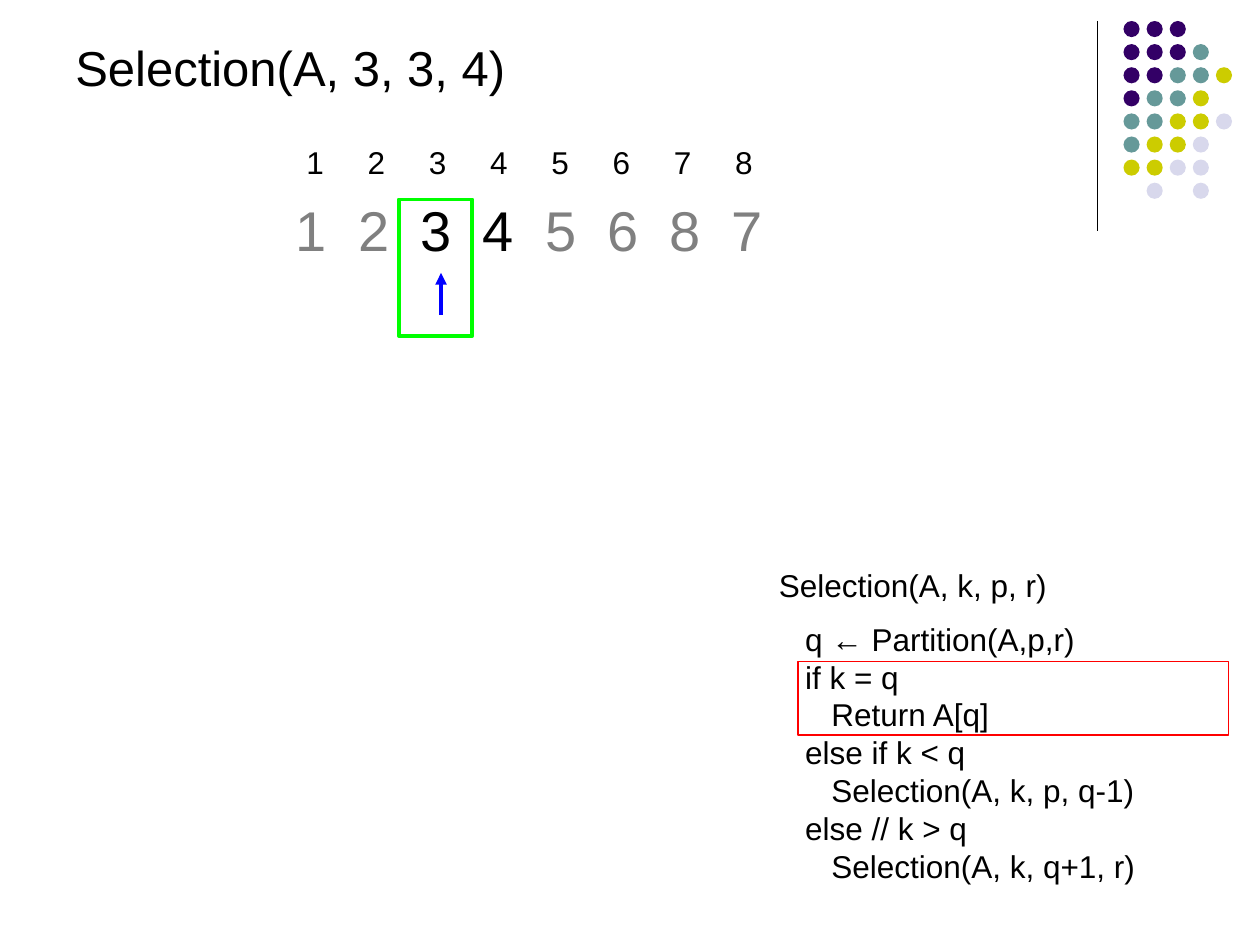
from lxml import etree
from pptx import Presentation
from pptx.dml.color import RGBColor
from pptx.enum.shapes import MSO_CONNECTOR as CONN, MSO_SHAPE as SHAPE
from pptx.oxml.ns import qn
from pptx.util import Pt

BLACK, GREY, RED, GREEN, BLUE = "000000", "808080", "FF0000", "00FF00", "0000FF"
DOT_COLORS = {"P": "330066", "T": "669999", "Y": "CCCC00", "L": "D8D8EC"}
DOT_ROWS = ["PPP", "PPPT", "PPTTY", "PTTY", "TTYYL", "TYYL", "YYLL", ".L.L"]
# Indent level and wording of each line of the algorithm
CODE = [
    (0, "Selection(A, k, p, r)"),
    (1, "q ← Partition(A,p,r)"),
    (1, "if k = q"),
    (2, "Return A[q]"),
    (1, "else if k < q"),
    (2, "Selection(A, k, p, q-1)"),
    (1, "else // k > q"),
    (2, "Selection(A, k, q+1, r)"),
]


def rgb(color):
    return RGBColor.from_string(color)


class Deck:
    font = "Arial"
    line_factor = 1.2
    indent = 15

    def __init__(self, width, height):
        self.prs = Presentation()
        self.prs.slide_width, self.prs.slide_height = Pt(width), Pt(height)
        self.s = self.prs.slides.add_slide(self.prs.slide_layouts[6])

    def text_frame(self, x, y, w, h):
        tf = self.s.shapes.add_textbox(Pt(x), Pt(y), Pt(w), Pt(h)).text_frame
        tf.word_wrap = True
        return tf

    def style(self, p, size, before=0):
        fmt = {"line_spacing": Pt(size * self.line_factor), "space_before": Pt(before)}
        for name, value in fmt.items():
            setattr(p, name, value)

    def run(self, p, text, size, color=BLACK):
        r = p.add_run()
        r.text = text
        for name, value in {"name": self.font, "size": Pt(size)}.items():
            setattr(r.font, name, value)
        r.font.color.rgb = rgb(color)

    def lines(self, x, y, w, h, rows, size):
        """Write one paragraph per (indent level, text), with a gap below the first."""
        tf = self.text_frame(x, y, w, h)
        for i, (level, text) in enumerate(rows):
            p = tf.paragraphs[0] if i == 0 else tf.add_paragraph()
            self.style(p, size, 9 if i == 1 else 0)
            p._p.get_or_add_pPr().set("marL", str(Pt(level * self.indent)))
            self.run(p, text, size)

    def digits(self, x, y, w, h, values, size, pitch, colors):
        """Write the values on tab stops, pitch points apart."""
        p = self.text_frame(x, y, w, h).paragraphs[0]
        self.style(p, size)
        tabs = etree.SubElement(p._p.get_or_add_pPr(), qn("a:tabLst"))
        for i, (value, color) in enumerate(zip(values, colors)):
            if i:
                etree.SubElement(tabs, qn("a:tab"), pos=str(Pt(i * pitch)), algn="l")
            self.run(p, f"\t{value}" if i else value, size, color)

    def frame(self, x, y, w, h, color, weight):
        sp = self.s.shapes.add_shape(SHAPE.RECTANGLE, Pt(x), Pt(y), Pt(w), Pt(h))
        sp.shadow.inherit = False
        sp.fill.background()
        sp.line.color.rgb = rgb(color)
        sp.line.width = Pt(weight)

    def line(self, x1, y1, x2, y2, color, weight, arrow=False):
        c = self.s.shapes.add_connector(CONN.STRAIGHT, Pt(x1), Pt(y1), Pt(x2), Pt(y2))
        c.line.color.rgb = rgb(color)
        c.line.width = Pt(weight)
        if arrow:
            etree.SubElement(c.line._get_or_add_ln(), qn("a:tailEnd"), type="triangle")
        etree.SubElement(c._element.spPr, qn("a:effectLst"))

    def dots(self, x, y, rows, pitch, size):
        """Draw a grouped grid of dots; a full stop leaves its cell empty."""
        group = self.s.shapes.add_group_shape()
        for i, row in enumerate(rows):
            for j, key in enumerate(row):
                if key in DOT_COLORS:
                    sp = group.shapes.add_shape(SHAPE.OVAL, Pt(x + j * pitch),
                                                Pt(y + i * pitch), Pt(size), Pt(size))
                    sp.shadow.inherit = False
                    sp.fill.solid()
                    sp.fill.fore_color.rgb = rgb(DOT_COLORS[key])
                    sp.line.fill.background()


def main():
    deck = Deck(720, 540)
    deck.line(627, 12, 627, 132, BLACK, 0.75)
    deck.dots(642, 12, DOT_ROWS, 13.2, 9.2)
    deck.lines(438, 320, 270, 193, CODE, 18)
    deck.lines(36, 18, 462, 41, [(0, "Selection(A, 3, 3, 4)")], 28)
    deck.frame(456, 378, 246, 42, RED, 0.75)
    colors = [BLACK if i in (2, 3) else GREY for i in range(8)]
    deck.digits(162, 108, 330, 45.6, "12345687", 32, 35.6, colors)
    deck.line(252, 180, 252, 156, BLUE, 2.25, arrow=True)
    deck.frame(228, 114, 42, 78, GREEN, 2.25)
    deck.digits(168, 78, 300, 28.8, "12345678", 18, 35, [BLACK] * 8)
    deck.prs.save("out.pptx")


if __name__ == "__main__":
    main()
